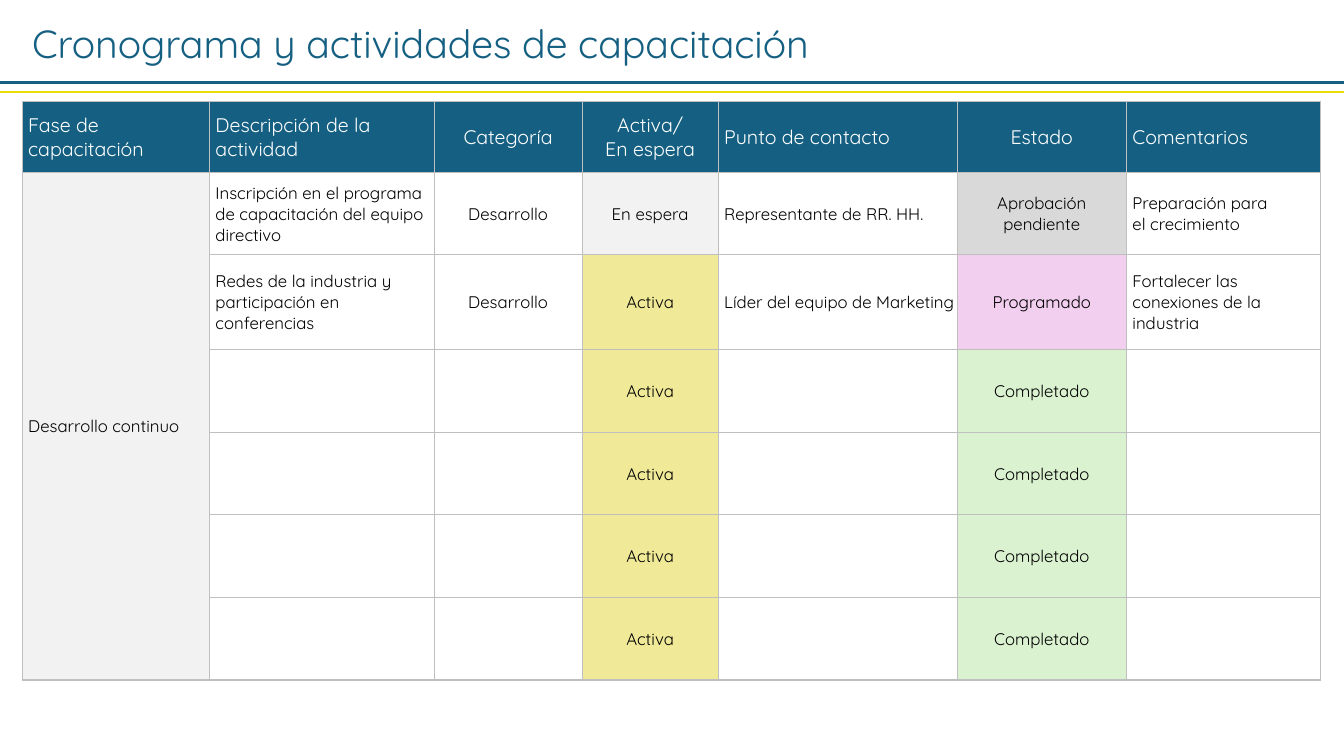
from pptx import Presentation
from pptx import util as u
from pptx.dml.color import RGBColor
from pptx.enum import shapes, text
from pptx.oxml import parse_xml
from pptx.oxml.ns import nsdecls

TEAL, GOLD, GRID = "156082", "E8DD06", "BFBFBF"
FILLS = {
    "En espera": "F2F2F2",
    "Activa": "F0EA98",
    "Aprobación pendiente": "D9D9D9",
    "Programado": "F2CEEF",
    "Completado": "DAF2D0",
    "Desarrollo continuo": "F2F2F2",
}
WIDTHS = [4.72, 5.66, 3.73, 3.43, 6.02, 4.27, 4.88]
HEIGHTS = [1.78, 2.08, 2.39] + [2.08] * 4
CENTRED = {2, 3, 5}
ROWS = [
    ["Fase de capacitación", "Descripción de la actividad", "Categoría",
     "Activa/\nEn espera", "Punto de contacto", "Estado", "Comentarios"],
    ["Desarrollo continuo",
     "Inscripción en el programa de capacitación del equipo directivo",
     "Desarrollo", "En espera", "Representante de RR. HH.",
     "Aprobación pendiente", "Preparación para \nel crecimiento"],
    ["", "Redes de la industria y participación en conferencias",
     "Desarrollo", "Activa", "Líder del equipo de Marketing",
     "Programado", "Fortalecer las conexiones de la industria"],
] + [["", "", "", "Activa", "", "Completado", ""]] * 4


def rgb(code):
    return RGBColor.from_string(code)


def write(frame, words, size=12, color="000000", font="Quicksand", align="LEFT"):
    para = frame.paragraphs[0]
    para.text = words
    para.alignment = getattr(text.PP_ALIGN, align)
    for run in para.runs:
        run.font.size = u.Pt(size)
        run.font.name = font
        run.font.color.rgb = rgb(color)


class Deck:
    def __init__(self, wide, high):
        self.file = Presentation()
        self.file.slide_width = u.Cm(wide)
        self.file.slide_height = u.Cm(high)
        self.wide = wide
        self.slide = self.file.slides.add_slide(self.file.slide_layouts[6])

    def title(self, words, left, top, wide, high):
        box = self.slide.shapes.add_textbox(*map(u.Cm, (left, top, wide, high)))
        box.text_frame.word_wrap = True
        write(box.text_frame, words, size=28, color=TEAL)

    def rule(self, top, color):
        line = self.slide.shapes.add_connector(
            shapes.MSO_CONNECTOR.STRAIGHT, 0, u.Cm(top), u.Cm(self.wide), u.Cm(top))
        line.line.color.rgb = rgb(color)
        line.line.width = u.Pt(1.5)
        line._element.spPr.append(parse_xml(f"<a:effectLst {nsdecls('a')}/>"))

    def edge(self, cell, last):
        props = cell._tc.get_or_add_tcPr()
        for spot, side in enumerate("LRTB"):
            wide = u.Pt(1.5 if last and side == "B" else 0.5)
            props.insert(spot, parse_xml(
                f'<a:ln{side} {nsdecls("a")} w="{wide}"><a:solidFill>'
                f'<a:srgbClr val="{GRID}"/></a:solidFill></a:ln{side}>'))

    def cell(self, cell, words, head, centre, last):
        cell.vertical_anchor = text.MSO_ANCHOR.MIDDLE
        cell.margin_left = u.Cm(0.02 if centre else 0.15)
        cell.margin_right = cell.margin_top = u.Cm(0.02)
        cell.margin_bottom = 0
        fill = TEAL if head else FILLS.get(words)
        if fill:
            cell.fill.solid()
            cell.fill.fore_color.rgb = rgb(fill)
        else:
            cell.fill.background()
        self.edge(cell, last)
        if words:
            write(cell.text_frame, words, size=14 if head else 12,
                  color="FFFFFF" if head else "000000",
                  align="CENTER" if centre else "LEFT")

    def table(self, rows, left, top):
        frame = self.slide.shapes.add_table(
            len(rows), len(WIDTHS), u.Cm(left), u.Cm(top),
            u.Cm(sum(WIDTHS)), u.Cm(sum(HEIGHTS)))
        table = frame.table
        table.first_row = table.horz_banding = False
        for col, wide in zip(table.columns, WIDTHS):
            col.width = u.Cm(wide)
        for row, high in zip(table.rows, HEIGHTS):
            row.height = u.Cm(high)
        table.cell(1, 0).merge(table.cell(len(rows) - 1, 0))
        for r, row in enumerate(rows):
            for c, words in enumerate(row):
                last = r == len(rows) - 1 or (r, c) == (1, 0)
                self.cell(table.cell(r, c), words, r == 0, c in CENTRED, last)


def main():
    deck = Deck(33.87, 19.05)
    deck.table(ROWS, 0.56, 2.56)
    deck.title("Cronograma y actividades de capacitación", 0.56, 0.36, 28.24, 1.45)
    deck.rule(2.08, TEAL)
    deck.rule(2.31, GOLD)
    deck.file.save("out.pptx")


if __name__ == "__main__":
    main()
